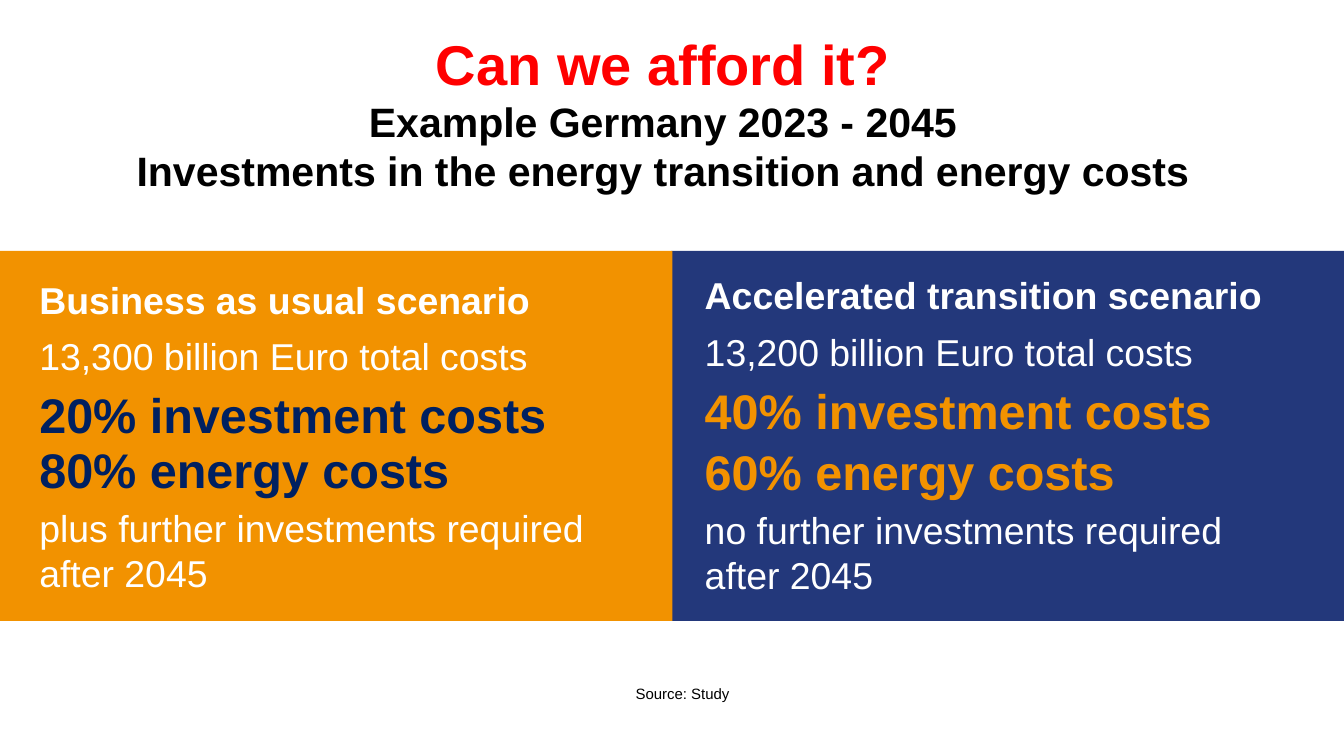
from dataclasses import dataclass

import pptx
import pptx.dml.color
import pptx.enum.shapes
import pptx.enum.text
import pptx.oxml
import pptx.oxml.ns
import pptx.util

Inches = pptx.util.Inches
Pt = pptx.util.Pt
Align = pptx.enum.text.PP_ALIGN
Anchor = pptx.enum.text.MSO_ANCHOR


@dataclass(frozen=True)
class Theme:
    font: str = "Arial"
    white: str = "FFFFFF"
    black: str = "000000"
    red: str = "FF0000"
    orange: str = "F29200"
    blue: str = "23387B"
    navy: str = "002060"
    head: float = 40
    sub: float = 29.3
    body: float = 26.7
    big: float = 34.7
    note: float = 10.7


@dataclass(frozen=True)
class Line:
    text: str
    bold: bool = False
    big: bool = False
    pitch: float = 1.0
    after: float = 8


@dataclass(frozen=True)
class Panel:
    left: float
    fill: str
    accent: str
    box: tuple[float, float, float, float]
    lines: tuple[Line, ...]


theme = Theme()
panels = (
    Panel(0, theme.orange, theme.navy, (0.26, 2.83, 6.19, 2.99), (
        Line("Business as usual scenario", bold=True),
        Line("13,300 billion Euro total costs"),
        Line("20% investment costs", True, True, 0.95, 0),
        Line("80% energy costs", True, True, 0.95, 4),
        Line("plus further investments required after 2045"),
    )),
    Panel(6.66, theme.blue, theme.orange, (6.86, 3.34, 6, 1.97), (
        Line("Accelerated transition scenario", bold=True, pitch=0.95),
        Line("13,200 billion Euro total costs"),
        Line("40% investment costs", True, True, 0.95, 4),
        Line("60% energy costs", True, True, 0.95, 4),
        Line("no further investments required after 2045"),
    )),
)


def place(shape, box: tuple[float, float, float, float], anchor=Anchor.MIDDLE):
    shape.left, shape.top, shape.width, shape.height = map(Inches, box)
    frame = shape.text_frame
    frame.word_wrap = True
    frame.auto_size = pptx.enum.text.MSO_AUTO_SIZE.NONE
    frame.vertical_anchor = anchor
    frame.margin_left = frame.margin_right = Inches(0.13)
    frame.margin_top = frame.margin_bottom = Inches(0.07)
    return frame


def write(para, text: str, *, size: float, color: str, bold: bool = False,
          align=Align.LEFT, pitch: float = 1.0, after: float = 0) -> None:
    para.alignment = align
    para.line_spacing = pitch
    para.space_before = Pt(0)
    para.space_after = Pt(after)
    run = para.add_run()
    run.text = text
    run.font.name = theme.font
    run.font.size = Pt(size)
    run.font.bold = bold
    run.font.color.rgb = pptx.dml.color.RGBColor.from_string(color)


def unlist(para) -> None:
    props = para._p.get_or_add_pPr()
    props.set("marL", "0")
    props.set("indent", "0")
    props.append(pptx.oxml.parse_xml(
        f"<a:buNone {pptx.oxml.ns.nsdecls('a')}/>"))


def draw_panel(slide, panel: Panel, holder) -> None:
    rect = slide.shapes.add_shape(
        pptx.enum.shapes.MSO_SHAPE.RECTANGLE,
        Inches(panel.left), Inches(2.49), Inches(6.67), Inches(3.67))
    rect.shadow.inherit = False
    rect.fill.solid()
    rect.fill.fore_color.rgb = pptx.dml.color.RGBColor.from_string(panel.fill)
    rect.line.fill.background()
    slide.shapes._spTree.insert(2, rect._element)
    frame = place(holder, panel.box)
    for i, line in enumerate(panel.lines):
        para = frame.add_paragraph() if i else frame.paragraphs[0]
        write(para, line.text, bold=line.bold, pitch=line.pitch,
              after=line.after, size=theme.big if line.big else theme.body,
              color=panel.accent if line.big else theme.white)
        unlist(para)


def draw_title(slide) -> None:
    frame = place(slide.shapes.title, (0.01, 0.6, 13.33, 1.02))
    first = frame.paragraphs[0]
    write(first, "Can we afford it?", size=theme.head, color=theme.red,
          bold=True, align=Align.CENTER)
    first.add_line_break()
    sub = dict(size=theme.sub, color=theme.black, bold=True,
               align=Align.CENTER)
    write(first, "Example Germany 2023 - 2045", **sub)
    first._p.get_or_add_pPr().set("marR", str(Inches(0.2)))
    write(frame.add_paragraph(),
          "Investments in the energy transition and energy costs", **sub)


def main() -> None:
    deck = pptx.Presentation()
    deck.slide_width, deck.slide_height = Inches(13.33), Inches(7.5)
    slide = deck.slides.add_slide(deck.slide_layouts[3])
    draw_title(slide)
    for i, panel in enumerate(panels, 1):
        draw_panel(slide, panel, slide.placeholders[i])
    note = slide.shapes.add_textbox(0, 0, 0, 0)
    frame = place(note, (3.41, 6.72, 6.72, 0.31), Anchor.TOP)
    write(frame.paragraphs[0], "Source: Study", size=theme.note,
          color=theme.black, align=Align.CENTER)
    deck.save("out.pptx")


if __name__ == "__main__":
    main()
